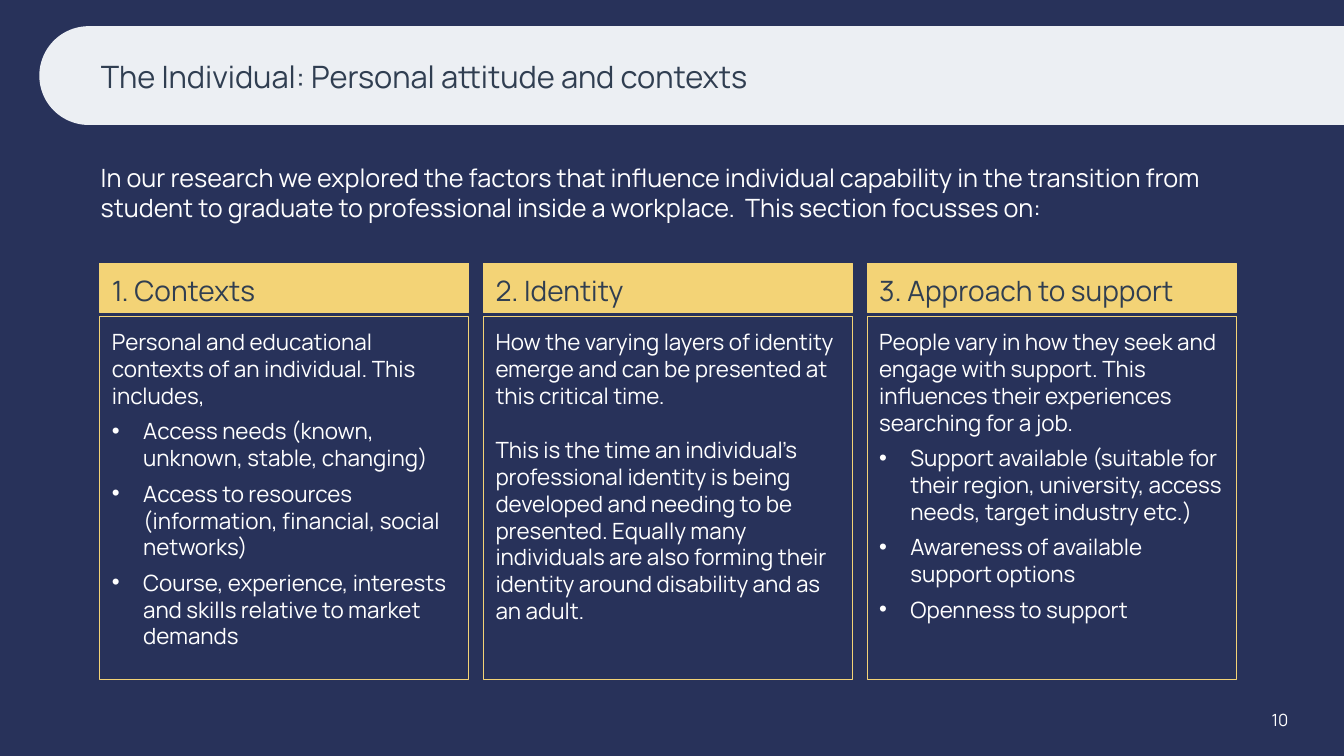
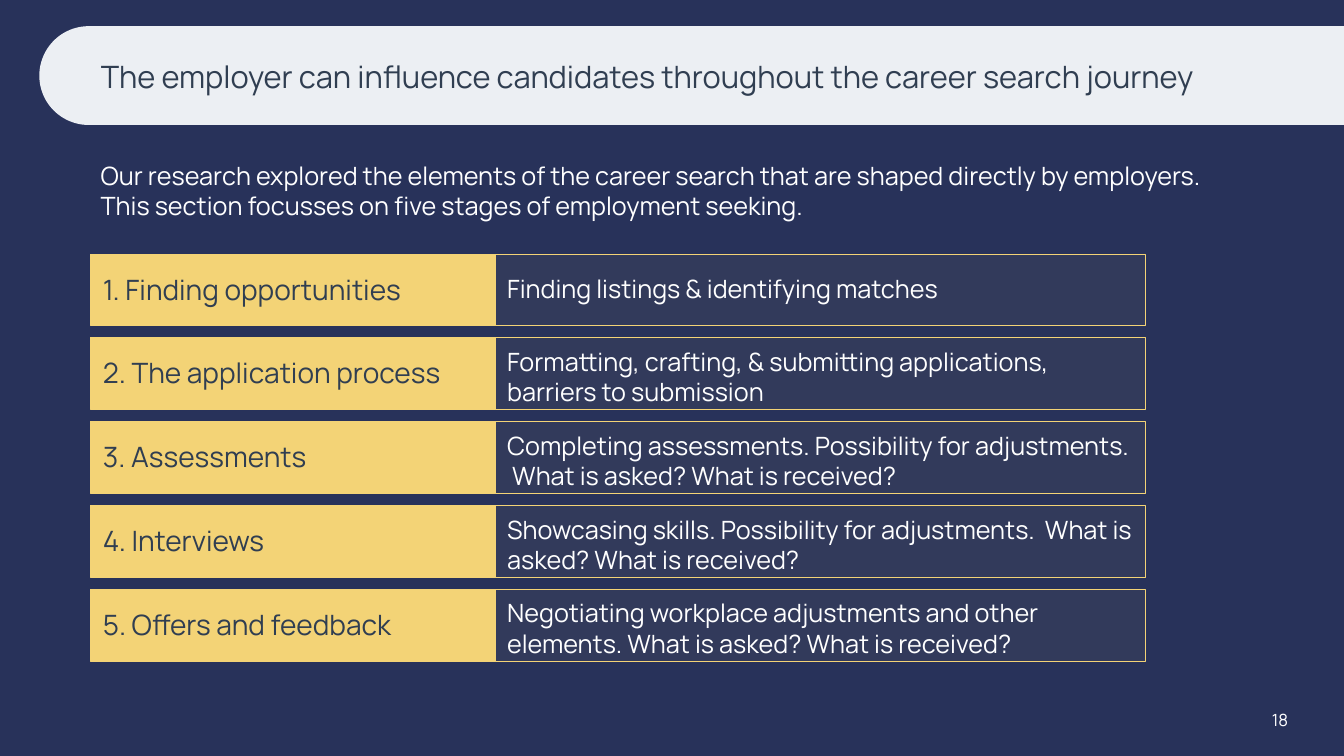
from collections import namedtuple

from lxml import etree
from pptx import Presentation
from pptx.dml.color import RGBColor
from pptx.enum.shapes import MSO_SHAPE
from pptx.enum.text import MSO_ANCHOR, MSO_AUTO_SIZE, PP_ALIGN
from pptx.oxml.ns import qn
from pptx.util import Inches, Pt

RECTANGLE = MSO_SHAPE.RECTANGLE
ROUNDED = MSO_SHAPE.ROUNDED_RECTANGLE
TOP, MIDDLE = MSO_ANCHOR.TOP, MSO_ANCHOR.MIDDLE
LEFT, CENTER = PP_ALIGN.LEFT, PP_ALIGN.CENTER
NO_AUTOFIT = MSO_AUTO_SIZE.NONE
TITLE_ONLY = 5

FONT = "Manrope"
COLORS = {
    "background": "28325A",
    "band": "ECEFF3",
    "accent": "F3D376",
    "dark": "303E51",
    "light": "FFFFFF",
}
TEXT_INSETS = (0.1, 0.05, 0.1, 0.05)
HEADING_INSETS = (0.12, 0.1, 0.12, 0.12)
CARD_INSETS = (0.12, 0.12, 0.12, 0.12)
TWO_LINE_INSETS = (0.12, 0.08, 0.12, 0.12)
BULLET_INDENT = 0.31

Box = namedtuple("Box", "left top width height")
Item = namedtuple("Item", "text space_before bullet", defaults=(0, False))


def bullet(text):
    return Item(text, 6, True)


COLUMNS = [
    ("1. Contexts", [
        Item("Personal and educational contexts of an individual. This includes,"),
        bullet("Access needs (known, unknown, stable, changing)"),
        bullet("Access to resources (information, financial, social networks)"),
        bullet("Course, experience, interests and skills relative to market demands"),
    ]),
    ("2. Identity", [
        Item("How the varying layers of identity emerge and can be presented at "
             "this critical time."),
        Item("This is the time an individual’s professional identity is being "
             "developed and needing to be presented. Equally many individuals are "
             "also forming their identity around disability and as an adult.", 19.2),
    ]),
    ("3. Approach to support", [
        Item("People vary in how they seek and engage with support. This influences "
             "their experiences searching for a job."),
        bullet("Support available (suitable for their region, university, access "
               "needs, target industry etc.)"),
        bullet("Awareness of available support options"),
        bullet("Openness to support"),
    ]),
]

STAGES = [
    ("1. Finding opportunities", "Finding listings & identifying matches",
     MIDDLE, HEADING_INSETS),
    ("2. The application process",
     "Formatting, crafting, & submitting applications,\nbarriers to submission",
     TOP, TWO_LINE_INSETS),
    ("3. Assessments",
     "Completing assessments. Possibility for adjustments.  What is asked? "
     "What is received?",
     TOP, TWO_LINE_INSETS),
    ("4. Interviews",
     "Showcasing skills. Possibility for adjustments.  What is asked? "
     "What is received?",
     TOP, TWO_LINE_INSETS),
    ("5. Offers and feedback",
     "Negotiating workplace adjustments and other elements. What is asked? "
     "What is received?",
     TOP, TWO_LINE_INSETS),
]


def rgb(name):
    return RGBColor.from_string(COLORS[name])


def inches(box):
    return [Inches(value) for value in box]


def add_bullet(paragraph):
    properties = paragraph._p.get_or_add_pPr()
    properties.set("marL", str(Inches(BULLET_INDENT)))
    properties.set("indent", str(-Inches(BULLET_INDENT)))
    etree.SubElement(properties, qn("a:buFont")).set("typeface", "Arial")
    etree.SubElement(properties, qn("a:buChar")).set("char", "•")


def write_text(shape, items, size, color, anchor=TOP, insets=TEXT_INSETS,
               alignment=LEFT):
    frame = shape.text_frame
    frame.word_wrap = True
    frame.auto_size = NO_AUTOFIT
    frame.vertical_anchor = anchor
    (frame.margin_left, frame.margin_top,
     frame.margin_right, frame.margin_bottom) = inches(insets)
    for index, item in enumerate(items):
        paragraph = frame.add_paragraph() if index else frame.paragraphs[0]
        paragraph.text = item.text
        if item.bullet:
            add_bullet(paragraph)
        paragraph.alignment = alignment
        paragraph.space_before = Pt(item.space_before)
        paragraph.font.name = FONT
        paragraph.font.size = Pt(size)
        paragraph.font.color.rgb = rgb(color)


def add_text(slide, box, text, size, **options):
    shape = slide.shapes.add_textbox(*inches(box))
    write_text(shape, [Item(text)], size, "light", **options)


def add_panel(slide, box, opacity):
    shape = slide.shapes.add_shape(RECTANGLE, *inches(box))
    shape.shadow.inherit = False
    shape.line.color.rgb = rgb("accent")
    shape.line.width = Pt(0.75)
    if opacity == 0:
        shape.fill.background()
        return shape
    shape.fill.solid()
    shape.fill.fore_color.rgb = rgb("accent")
    if opacity < 100:
        color = shape.element.spPr.find(qn("a:solidFill"))[0]
        etree.SubElement(color, qn("a:alpha")).set("val", str(opacity * 1000))
    return shape


def add_heading(slide, box, text, anchor):
    shape = add_panel(slide, box, 100)
    write_text(shape, [Item(text)], 20, "dark", anchor, HEADING_INSETS)


def add_title_band(slide, box, text):
    band = slide.shapes.add_shape(ROUNDED, *inches(box))
    band.adjustments[0] = 0.5
    band.shadow.inherit = False
    band.fill.solid()
    band.fill.fore_color.rgb = rgb("band")
    band.line.fill.background()
    title = slide.shapes.title
    title.element.addprevious(band.element)
    title.left, title.top, title.width, title.height = inches(
        Box(box.left + 0.51, box.top + 0.25, box.width - 1, 0.5))
    write_text(title, [Item(text)], 22, "dark", MIDDLE)


def add_base_slide(presentation, title, intro, intro_top, number):
    slide = presentation.slides.add_slide(presentation.slide_layouts[TITLE_ONLY])
    add_title_band(slide, Box(0.39, 0.26, 13.43, 0.98), title)
    add_text(slide, Box(0.9, intro_top, 11.52, 0.71), intro, 18)
    add_text(slide, Box(12.42, 6.98, 0.55, 0.32), number, 12,
             anchor=MIDDLE, alignment=CENTER)
    return slide


def add_columns(slide, box):
    width, heading_height, card_offset = 3.66, 0.49, 0.53
    pitch = (box.width - width) / (len(COLUMNS) - 1)
    for index, (heading, items) in enumerate(COLUMNS):
        left = box.left + index * pitch
        add_heading(slide, Box(left, box.top, width, heading_height), heading, TOP)
        card = add_panel(slide, Box(left, box.top + card_offset, width,
                                    box.height - card_offset), 0)
        write_text(card, items, 16, "light", insets=CARD_INSETS)


def add_stages(slide, box):
    height, heading_width = 0.71, 4.01
    pitch = (box.height - height) / (len(STAGES) - 1)
    for index, (heading, description, anchor, insets) in enumerate(STAGES):
        top = box.top + index * pitch
        add_heading(slide, Box(box.left, top, heading_width, height), heading, MIDDLE)
        panel = add_panel(slide, Box(box.left + heading_width, top,
                                     box.width - heading_width, height), 5)
        write_text(panel, [Item(description)], 18, "light", anchor, insets)


def add_individual_slide(presentation):
    slide = add_base_slide(
        presentation,
        "The Individual: Personal attitude and contexts",
        "In our research we explored the factors that influence individual "
        "capability in the transition from student to graduate to professional "
        "inside a workplace.  This section focusses on:",
        1.56, "10")
    add_columns(slide, Box(0.99, 2.61, 11.27, 4.13))


def add_employer_slide(presentation):
    slide = add_base_slide(
        presentation,
        "The employer can influence candidates throughout the career search journey",
        "Our research explored the elements of the career search that are shaped "
        "directly by employers.  This section focusses on five stages of "
        "employment seeking.",
        1.54, "18")
    add_stages(slide, Box(0.9, 2.52, 10.46, 4.04))


def main():
    presentation = Presentation()
    presentation.slide_width = Inches(13.33)
    presentation.slide_height = Inches(7.5)
    background = presentation.slide_master.background.fill
    background.solid()
    background.fore_color.rgb = rgb("background")
    add_individual_slide(presentation)
    add_employer_slide(presentation)
    presentation.save("out.pptx")


if __name__ == "__main__":
    main()
